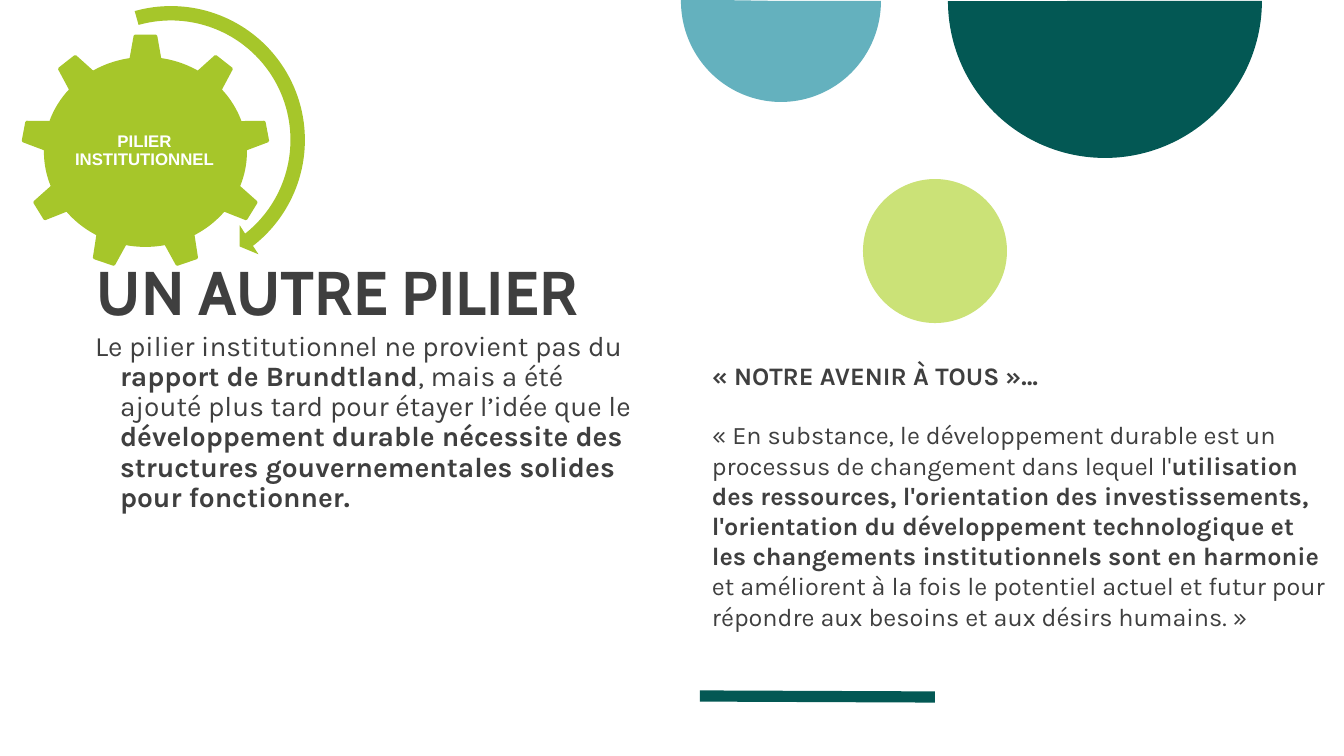
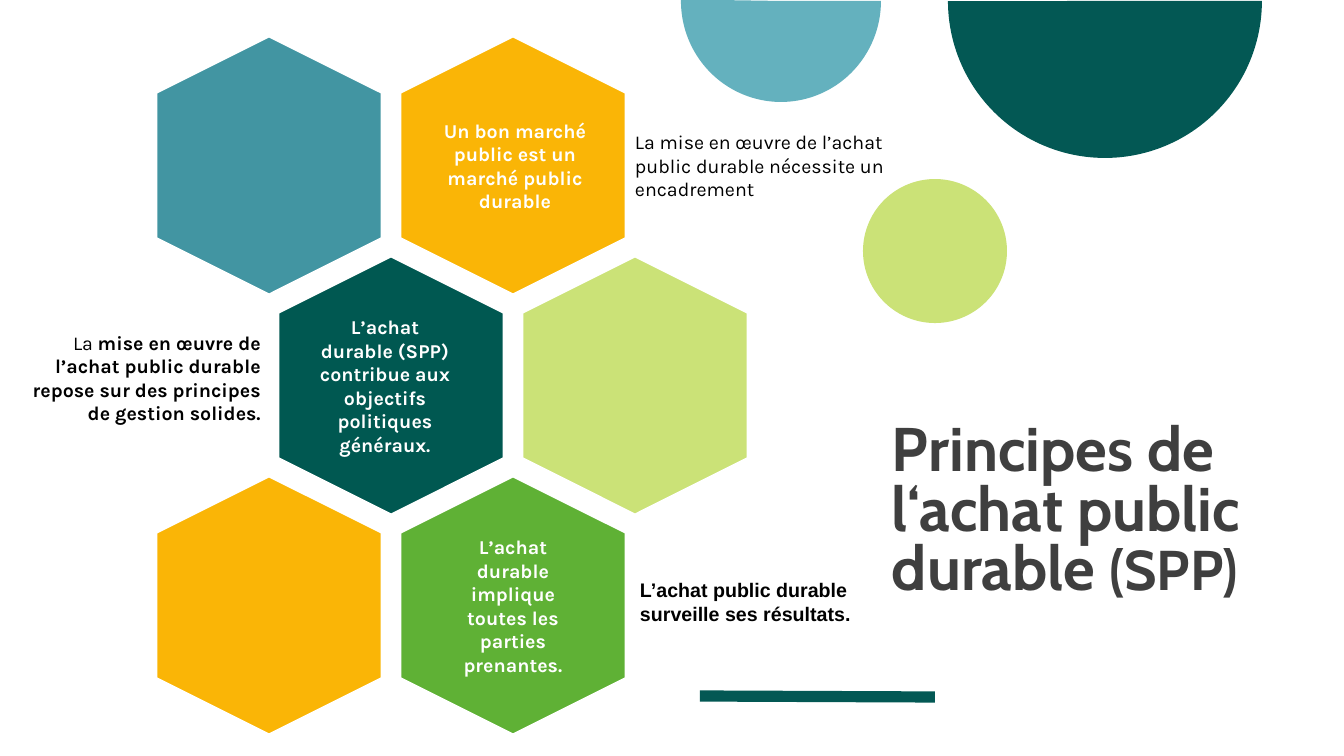
from lxml import etree
from pptx import Presentation
from pptx.dml.color import RGBColor
from pptx.enum.shapes import MSO_CONNECTOR, MSO_SHAPE as Preset
from pptx.enum.text import MSO_ANCHOR as Anchor, MSO_AUTO_SIZE as AutoSize, PP_ALIGN as Align
from pptx.oxml.ns import qn
from pptx.util import Pt

EMU_PER_PX = 12192000 / 1344

PINE, SKY, LIME = "035854", "64B1BE", "CBE277"
LEAF, AMBER, TEAL, FOREST, GRASS = "A6C62A", "FAB506", "4295A2", "005851", "5FB135"
INK, BLACK, WHITE = "3F3F3F", "000000", "FFFFFF"
TITLE_FONT, TEXT_FONT, LABEL_FONT = "Cabin", "Karla", "Arial"


def px(length):
    return round(length * EMU_PER_PX)


def rgb(value):
    return RGBColor.from_string(value)


def place(shape, left, top, width, height):
    shape.left, shape.top = px(left), px(top)
    shape.width, shape.height = px(width), px(height)


def add_preset(slide, preset, box, fill, line=None, adjustments=()):
    shape = slide.shapes.add_shape(preset, *map(px, box))
    shape.shadow.inherit = False
    shape.fill.solid()
    shape.fill.fore_color.rgb = rgb(fill)
    if line:
        shape.line.color.rgb = rgb(line)
        shape.line.width = Pt(2)
    else:
        shape.line.fill.background()
    for index, value in enumerate(adjustments):
        shape.adjustments[index] = value
    return shape


def set_frame(shape, insets, anchor):
    """Insets run left, top, right, bottom."""
    frame = shape.text_frame
    frame.word_wrap = True
    frame.auto_size = AutoSize.NONE
    frame.vertical_anchor = anchor
    (frame.margin_left, frame.margin_top,
     frame.margin_right, frame.margin_bottom) = map(px, insets)
    return frame


def write(paragraph, runs, size, color, font=TEXT_FONT, bold=None, align=Align.LEFT, spacing=1.0):
    """Runs are a string, or (text, bold) pairs where the weight changes."""
    paragraph.alignment = align
    paragraph.line_spacing = spacing
    paragraph.space_before = Pt(0)
    paragraph.font.name = font
    paragraph.font.size = Pt(size)
    paragraph.font.color.rgb = rgb(color)
    if bold is not None:
        paragraph.font.bold = bold
    for text, weight in [(runs, None)] if isinstance(runs, str) else runs:
        run = paragraph.add_run()
        run.text = text
        if weight is not None:
            run.font.bold = weight


def add_text(slide, box, runs, size, color, insets=(7, 7, 7, 7), **style):
    textbox = slide.shapes.add_textbox(*map(px, box))
    frame = set_frame(textbox, insets, Anchor.MIDDLE)
    write(frame.paragraphs[0], runs, size, color, **style)


def set_title(slide, box, text):
    place(slide.shapes.title, *box)
    paragraph = set_frame(slide.shapes.title, (0, 0, 0, 0), Anchor.BOTTOM).paragraphs[0]
    write(paragraph, text, 44, INK, font=TITLE_FONT, bold=True, spacing=0.8)
    return paragraph


def decorate_master(master, slide):
    """Draws the shared circles and rule, then moves them to the master."""
    rule = slide.shapes.add_connector(MSO_CONNECTOR.STRAIGHT, px(700), px(696), px(935), px(697))
    rule.line.color.rgb = rgb(PINE)
    rule.line.width = Pt(8)
    etree.SubElement(rule.element.spPr, qn("a:effectLst"))
    decor = [
        rule,
        add_preset(slide, Preset.PIE, (948, -156, 314, 314), PINE, adjustments=(0, 107.96)),
        add_preset(slide, Preset.PIE, (681, -100, 200, 202), SKY, adjustments=(0, 108.52)),
        add_preset(slide, Preset.OVAL, (863, 179, 144, 144), LIME),
    ]
    for shape in decor:
        master.shapes.element.append(shape.element)


def add_pillar_gear(slide, left, top):
    add_preset(slide, Preset.GEAR_9, (left, top, 247, 234), LEAF, LEAF)
    add_text(slide, (left + 49, top + 56, 149, 120), "PILIER INSTITUTIONNEL", 12, WHITE,
             insets=(0, 2, 2, 2), font=LABEL_FONT, bold=True, align=Align.CENTER, spacing=0.9)
    add_preset(slide, Preset.CIRCULAR_ARROW, (left + 5, top - 39, 288, 288), LEAF,
               adjustments=(0.05, 3.13, 31.17, 152.57, 0.06))


def set_body(body, box):
    place(body, *box)
    paragraph = set_frame(body, (0, 5, 0, 0), Anchor.TOP).paragraphs[0]
    properties = paragraph._p.get_or_add_pPr()
    properties.set("marL", str(px(50)))
    properties.set("indent", str(px(-25)))
    etree.SubElement(properties, qn("a:buNone"))
    write(paragraph, [
        ("Le pilier institutionnel ne provient pas du ", None),
        ("rapport de Brundtland", True),
        (", mais a été ajouté plus tard pour étayer l’idée que le ", None),
        ("développement durable nécessite des structures gouvernementales solides "
         "pour fonctionner.", True),
    ], 20, INK, spacing=0.9)


def add_quote(slide, box):
    frame = set_frame(slide.shapes.add_textbox(*map(px, box)), (10, 5, 10, 5), Anchor.TOP)
    write(frame.paragraphs[0], "« NOTRE AVENIR À TOUS »…", 18, INK, bold=True)
    quote = frame.add_paragraph()
    write(quote, [
        ("« En substance, le développement durable est un processus de changement "
         "dans lequel l'", None),
        ("utilisation des ressources, l'orientation des investissements, l'orientation du "
         "développement technologique et les changements institutionnels sont en harmonie ", True),
        ("et améliorent à la fois le potentiel actuel et futur pour répondre aux besoins "
         "et aux désirs humains. »", None),
    ], 18, INK)
    quote.space_before = Pt(21)


def add_honeycomb(slide, left, top):
    """Odd rows are shifted right by half a column."""
    length, breadth = 259, 226
    column_step, row_step = 244, 220
    # row, column, fill, caption, caption width, caption shift
    cells = [
        (0, 0, TEAL, None, 0, 0),
        (0, 1, AMBER, "Un bon marché public est un marché public durable", 169, 2),
        (1, 0, FOREST, "L’achat durable (SPP) contribue aux objectifs politiques généraux.",
         155, -6),
        (1, 1, LIME, None, 0, 0),
        (2, 0, AMBER, None, 0, 0),
        (2, 1, GRASS, "L’achat durable implique toutes les parties prenantes.", 155, 0),
    ]
    for row, column, fill, caption, width, shift in cells:
        center_x = left + breadth / 2 + column * column_step + row % 2 * column_step / 2
        center_y = top + length / 2 + row * row_step
        hexagon = add_preset(
            slide, Preset.HEXAGON,
            (center_x - length / 2, center_y - breadth / 2, length, breadth), fill, WHITE)
        hexagon.rotation = 90
        if caption:
            add_text(slide, (center_x + shift - width / 2, center_y - 89, width, 178),
                     caption, 14, WHITE, bold=True, align=Align.CENTER)


def add_side_notes(slide, left, top):
    height = 155
    add_text(slide, (left + 472, top + 52, 289, height),
             "La mise en œuvre de l’achat public durable nécessite un encadrement", 14, BLACK)
    add_text(slide, (left - 145, top + 264, 257, height), [
        ("La ", None),
        ("mise en œuvre de l’achat public durable repose sur des principes "
         "de gestion solides.", True),
    ], 14, BLACK, align=Align.RIGHT)
    add_text(slide, (left + 477, top + 488, 226, height),
             "L’achat public durable surveille ses résultats.", 14, BLACK,
             font=LABEL_FONT, bold=True)


def build_pillar_slide(slide):
    set_title(slide, (97, 253, 647, 74), "UN AUTRE PILIER")
    set_body(slide.placeholders[1], (70, 327, 573, 358))
    add_quote(slide, (702, 355, 642, 285))
    add_pillar_gear(slide, 22, 35)


def build_principles_slide(slide):
    title = set_title(slide, (892, 292, 453, 310), "Principes de l‘achat public durable ")
    acronym = title.add_run()
    acronym.text = "(SPP)"
    acronym.font.size = Pt(40)
    honeycomb_corner = (156, 36)
    add_honeycomb(slide, *honeycomb_corner)
    add_side_notes(slide, *honeycomb_corner)


def main():
    prs = Presentation()
    prs.slide_width, prs.slide_height = px(1344), px(756)
    title_and_body, title_only = prs.slide_layouts[1], prs.slide_layouts[5]
    pillar = prs.slides.add_slide(title_and_body)
    decorate_master(prs.slide_master, pillar)
    build_pillar_slide(pillar)
    build_principles_slide(prs.slides.add_slide(title_only))
    prs.save("out.pptx")


if __name__ == "__main__":
    main()
